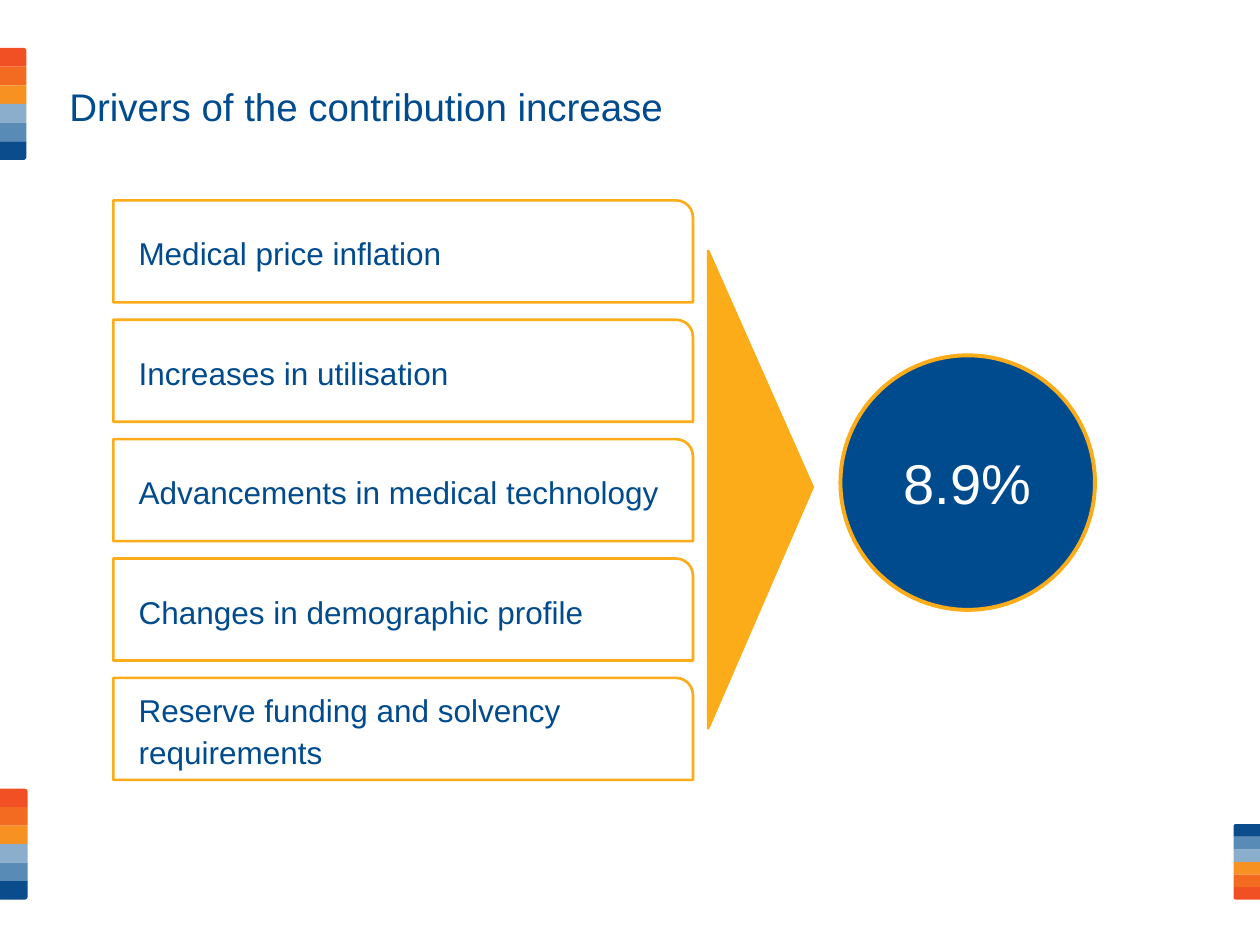
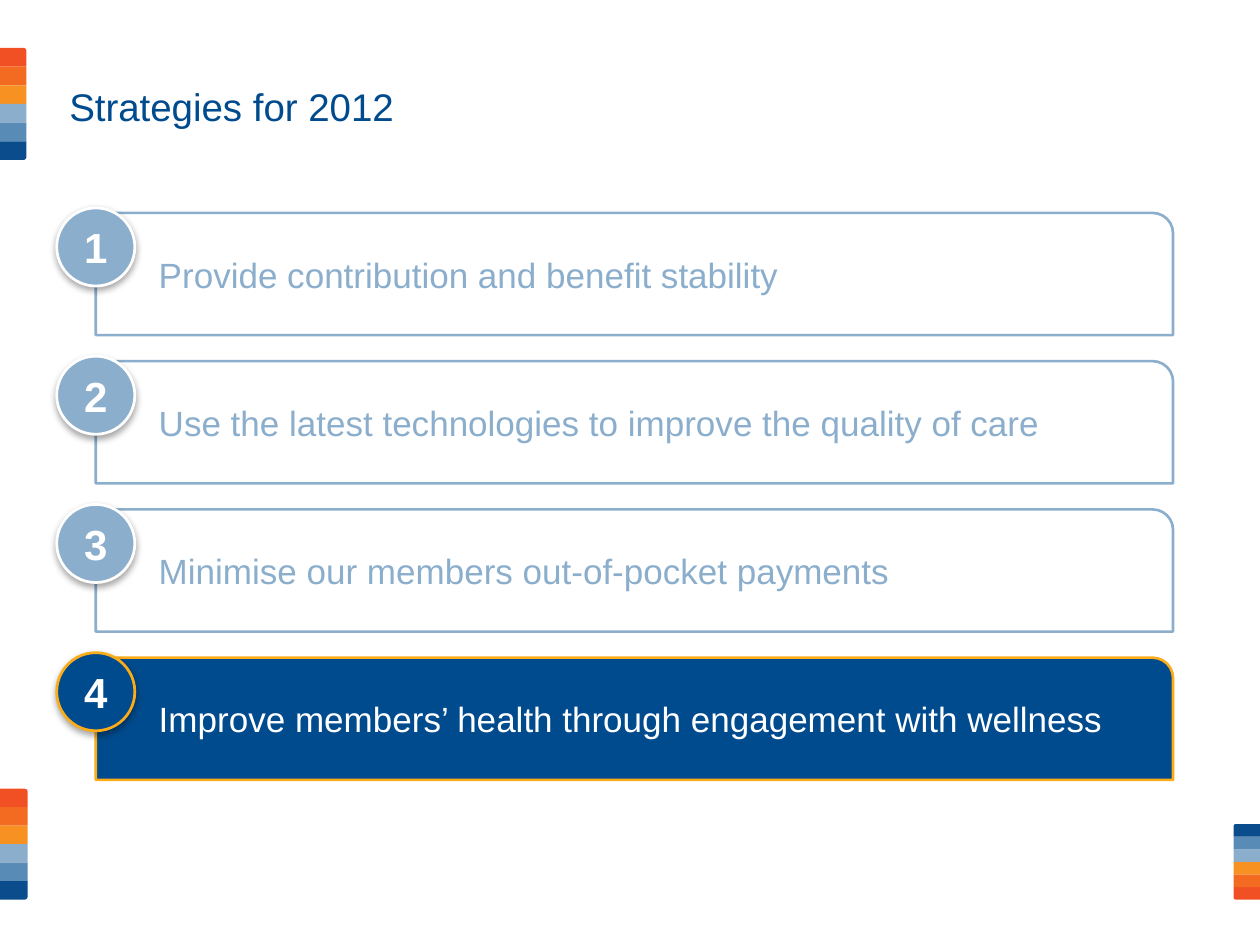
from pptx import Presentation
from pptx.dml.color import RGBColor as RGB
from pptx.enum.shapes import MSO_SHAPE as SHAPE
from pptx.enum.text import MSO_ANCHOR as ANCHOR, MSO_AUTO_SIZE as AUTO, PP_ALIGN as ALIGN
from pptx.oxml import parse_xml
from pptx.oxml.ns import nsdecls, qn
from pptx.util import Inches, Pt

HUES = {"navy": "004B8D", "gold": "FBAC18", "sky": "8BAECC", "white": "FFFFFF"}
BANDS = {"red": "F15024", "rust": "F36B21", "amber": "F79122",
         "pale": "8BAECC", "steel": "588BB6", "deep": "0B4C8C"}
FONT = "Arial"
CAUSES = ["Medical price inflation", "Increases in utilisation",
          "Advancements in medical technology", "Changes in demographic profile",
          "Reserve funding and solvency requirements"]
PLANS = ["Provide contribution and benefit stability",
         "Use the latest technologies to improve the quality of care",
         "Minimise our members out-of-pocket payments",
         "Improve members’ health through engagement with wellness"]


def shade(hue):
    """Return the colour for a hex string."""
    return RGB.from_string(hue)


def write(shape, text, size, hue, bold=False, align=ALIGN.LEFT, left=0.1, right=0.1, space=1.0):
    """Fill a shape with one formatted, vertically centred paragraph."""
    frame = shape.text_frame
    frame.text = text
    frame.word_wrap = True
    frame.auto_size = AUTO.NONE
    frame.vertical_anchor = ANCHOR.MIDDLE
    frame.margin_left, frame.margin_right = Inches(left), Inches(right)
    frame.margin_top = frame.margin_bottom = Inches(0.05)
    para = frame.paragraphs[0]
    para.alignment, para.line_spacing = align, space
    font = para.runs[0].font
    font.name, font.size, font.bold = FONT, Pt(size), bold
    font.color.rgb = shade(HUES[hue])


def draw(shapes, kind, box, fill, line=None, width=1.5):
    """Add a flat preset shape in a box of inches."""
    shape = shapes.add_shape(kind, *map(Inches, box))
    shape.shadow.inherit = False
    shape.fill.solid()
    shape.fill.fore_color.rgb = shade(fill)
    if line:
        shape.line.color.rgb = shade(line)
        shape.line.width = Pt(width)
    else:
        shape.line.fill.background()
    return shape


def lift(shape):
    """Give a shape a soft shadow below it."""
    shape.element.spPr.find(qn("a:effectLst")).append(parse_xml(
        f'<a:outerShdw {nsdecls("a")} blurRad="{Pt(4)}" dist="{Pt(2)}" dir="5400000" '
        'rotWithShape="0"><a:srgbClr val="000000"><a:alpha val="35000"/>'
        '</a:srgbClr></a:outerShdw>'))


def stack(shapes, box, turn=0):
    """Group the colour bands into a tab with rounded outer corners."""
    left, top, wide, high = box
    group = shapes.add_group_shape()
    step = high / len(BANDS)
    for i, (name, hue) in enumerate(BANDS.items()):
        band = draw(group.shapes, SHAPE.ROUND_1_RECTANGLE,
                    (left, top + i * step, wide, step), hue)
        if name == "deep":
            band.element.spPr.find(qn("a:xfrm")).set("flipV", "1")
        elif name != "red":
            band.adjustments[0] = 0
    group.rotation = turn
    return group


def brand(layout, slide):
    """Place the colour tabs on the layout that all slides share."""
    tree = layout.shapes.element
    for box, turn in [((-0.01, 0.38, 0.22, 0.89), 0),
                      ((9.79, 6.54, 0.21, 0.6), 180),
                      ((0, 6.26, 0.22, 0.88), 0)]:
        tree.append(stack(slide.shapes, box, turn).element)
    for i, item in enumerate(tree.iter(qn("p:cNvPr")), 1):
        item.set("id", str(i))


def head(slide, text):
    """Place and format the slide title."""
    title = slide.shapes.title
    title.left, title.top, title.width, title.height = map(Inches, (0.35, 0.38, 7.33, 0.92))
    write(title, text, 22, "navy", left=0.2)


def causes(slide, box):
    """Stack the driver cards evenly down a box."""
    left, top, wide, high = box
    tall = 0.81
    step = (high - tall) / (len(CAUSES) - 1)
    for i, text in enumerate(CAUSES):
        card = draw(slide.shapes, SHAPE.ROUND_1_RECTANGLE,
                    (left, top + i * step, wide, tall), HUES["white"], HUES["gold"])
        write(card, text, 18, "navy", left=0.2, right=0.2, space=1.1)


def result(slide, box):
    """Point a wedge at the total, which sits at the right of a box."""
    left, top, wide, high = box
    thick, size = 0.83, 2.02
    wedge = draw(slide.shapes, SHAPE.ISOSCELES_TRIANGLE,
                 (left + (thick - high) / 2, top + (high - thick) / 2, high, thick),
                 HUES["gold"], HUES["gold"])
    wedge.rotation = 90
    wedge.adjustments[0] = 0.495
    total = draw(slide.shapes, SHAPE.OVAL, (left + wide - size, top + 0.83, size, size),
                 HUES["navy"], HUES["gold"], 2.25)
    write(total, "8.9%", 32, "white", align=ALIGN.CENTER)


def plans(slide, box):
    """List the numbered strategies down a box, with the last one lit."""
    left, top, wide, high = box
    tall, size = 0.97, 0.62
    step = (high - tall) / (len(PLANS) - 1)
    for i, text in enumerate(PLANS):
        y = top + i * step
        lit = i == len(PLANS) - 1
        fill, edge, ink, disc, ring = (
            ("navy", "gold", "white", "navy", "gold") if lit
            else ("white", "sky", "sky", "sky", "white"))
        bar = draw(slide.shapes, SHAPE.ROUND_1_RECTANGLE, (left, y, wide, tall),
                   HUES[fill], HUES[edge])
        write(bar, text, 20, ink, left=0.5)
        badge = draw(slide.shapes, SHAPE.OVAL, (left - size / 2, y - 0.04, size, size),
                     HUES[disc], HUES[ring], 1.57)
        lift(badge)
        write(badge, str(i + 1), 24, "white", bold=True, align=ALIGN.CENTER, left=0, right=0)


def main():
    """Build and save both slides."""
    deck = Presentation()
    deck.slide_width, deck.slide_height = Inches(10), Inches(7.5)
    layout = deck.slide_layouts[5]
    first, second = (deck.slides.add_slide(layout) for _ in range(2))
    brand(layout, first)
    head(first, "Drivers of the contribution increase")
    causes(first, (0.9, 1.59, 4.6, 4.6))
    result(first, (5.62, 1.99, 3.07, 3.79))
    head(second, "Strategies for 2012")
    plans(second, (0.76, 1.69, 8.55, 4.5))
    deck.save("out.pptx")


if __name__ == "__main__":
    main()
